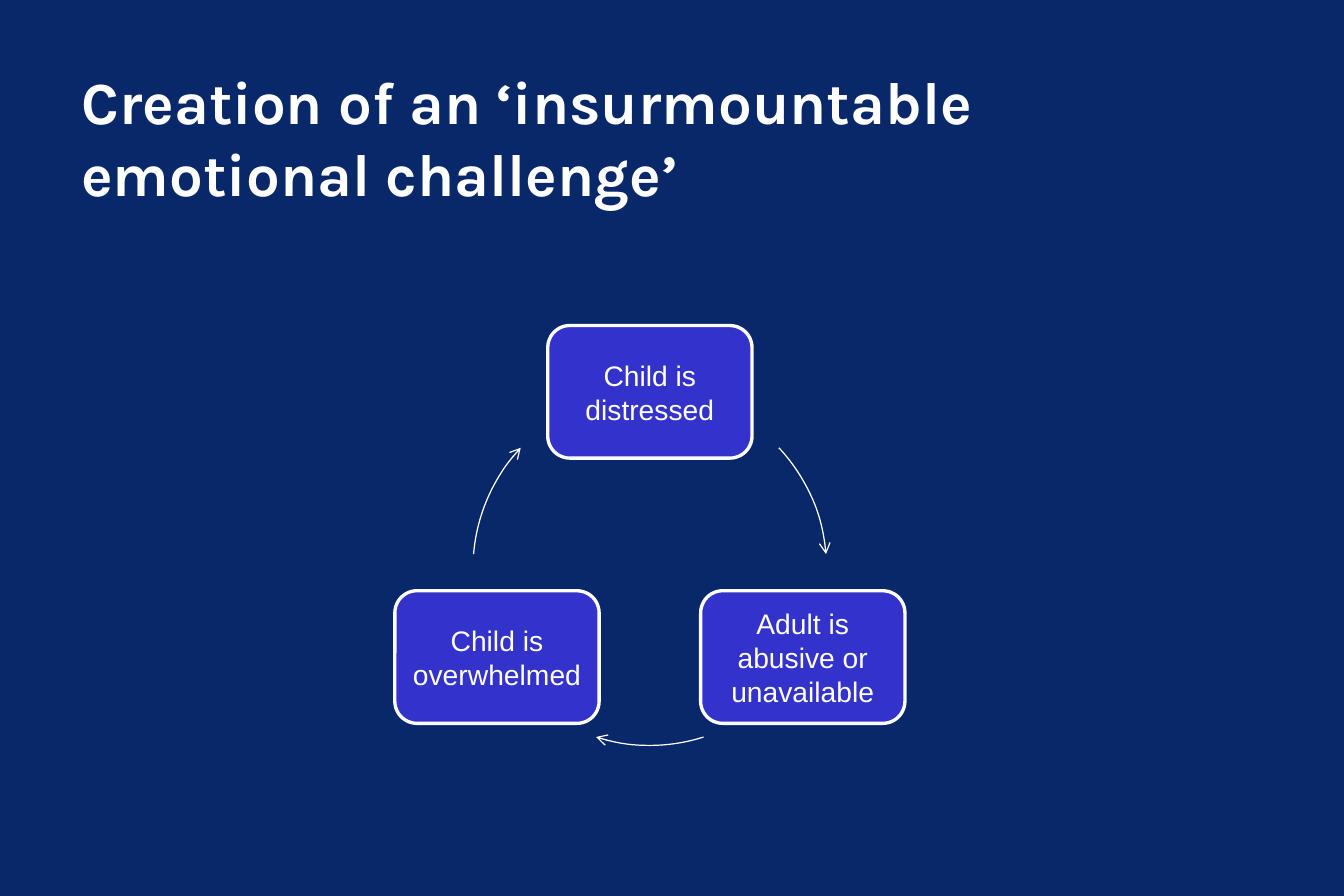
import pptx
import pptx.util
import pptx.dml.color
import pptx.enum.shapes
import pptx.enum.text
import pptx.oxml

Inches, Pt = pptx.util.Inches, pptx.util.Pt
RGB = pptx.dml.color.RGBColor
SHAPE = pptx.enum.shapes.MSO_SHAPE
ALIGN = pptx.enum.text.PP_ALIGN
MIDDLE = pptx.enum.text.MSO_ANCHOR.MIDDLE

NAVY = RGB(0x09, 0x28, 0x69)
BLUE = RGB(0x33, 0x33, 0xCC)
WHITE = RGB(0xFF, 0xFF, 0xFF)


def add_text(par, text, font, size, bold=False):
    run = par.add_run()
    run.text = text
    run.font.name = font
    run.font.size = Pt(size)
    run.font.bold = bold
    run.font.color.rgb = WHITE


deck = pptx.Presentation()
deck.slide_width, deck.slide_height = Inches(11.25), Inches(7.5)
slide = deck.slides.add_slide(deck.slide_layouts[5])
slide.background.fill.solid()
slide.background.fill.fore_color.rgb = NAVY

# Title
title = slide.shapes.title
title.left, title.top = Inches(0.58), Inches(0.52)
title.width, title.height = Inches(10.36), Inches(1.25)
frame = title.text_frame
frame.auto_size = pptx.enum.text.MSO_AUTO_SIZE.NONE
frame.vertical_anchor = MIDDLE
par = frame.paragraphs[0]
par.alignment = ALIGN.LEFT
add_text(par, "Creation of an ‘insurmountable", "Karla", 36, True)
par.add_line_break()
add_text(par, "emotional challenge’", "Karla", 36, True)

# Cycle: each step's box centre, and the arc that leads to the next step
mid_x, mid_y, radius = 5.44, 4.76, 1.48
box_w, box_h = 1.71, 1.11
steps = [
    ("Child is distressed", 5.44, 3.28, 316.9, 355.3),
    ("Adult is abusive or unavailable", 6.72, 5.5, 72.3, 107.7),
    ("Child is overwhelmed", 4.16, 5.5, 184.7, 223.1),
]
for text, x, y, start, end in steps:
    # Box
    box = slide.shapes.add_shape(
        SHAPE.ROUNDED_RECTANGLE, Inches(x - box_w / 2), Inches(y - box_h / 2),
        Inches(box_w), Inches(box_h))
    box.shadow.inherit = False
    box.fill.solid()
    box.fill.fore_color.rgb = BLUE
    box.line.color.rgb = WHITE
    box.line.width = Pt(2)
    frame = box.text_frame
    frame.word_wrap = True
    frame.vertical_anchor = MIDDLE
    frame.margin_left = frame.margin_right = Inches(0.07)
    frame.margin_top = frame.margin_bottom = Inches(0.07)
    par = frame.paragraphs[0]
    par.alignment = ALIGN.CENTER
    add_text(par, text, "Arial", 17)

    # Curved arrow, with angles clockwise from the right
    arc = slide.shapes.add_shape(
        SHAPE.ARC, Inches(mid_x - radius), Inches(mid_y - radius),
        Inches(2 * radius), Inches(2 * radius))
    arc.shadow.inherit = False
    arc.adjustments[0] = start * 0.6
    arc.adjustments[1] = end * 0.6
    arc.fill.background()
    arc.line.color.rgb = WHITE
    arc.line.width = Pt(0.75)
    line = arc.line._get_or_add_ln()
    line.append(pptx.oxml.parse_xml(
        '<a:tailEnd xmlns:a="http://schemas.openxmlformats.org/drawingml/2006/main"'
        ' type="arrow"/>'))

deck.save("out.pptx")
